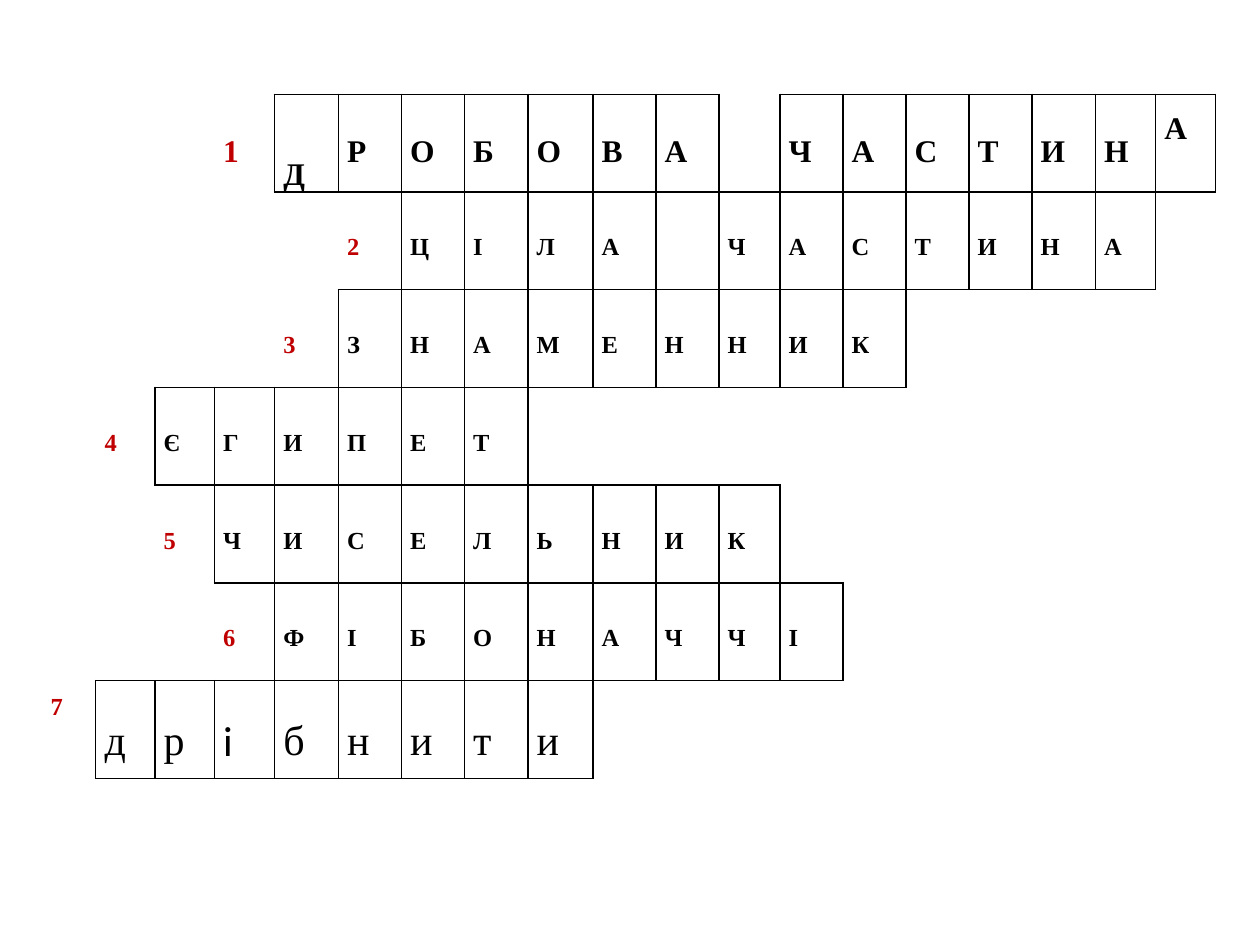
from dataclasses import dataclass

from lxml.etree import SubElement
from pptx import Presentation
from pptx.dml.color import RGBColor
from pptx.enum.text import MSO_ANCHOR as Anchor, PP_ALIGN as Align
from pptx.oxml.ns import qn
from pptx.util import Cm, Pt


@dataclass(frozen=True)
class Theme:
    ink: str = "000000"
    number: str = "C00000"
    key_fill: str = "FFFFFF"
    font: str = "Times New Roman"
    other_font: str = "Calibri"
    first_size: int = 18
    word_size: int = 14
    last_size: int = 24
    line_width: int = 1


THEME = Theme()

# Column of the first letter and the answer, row by row
ANSWERS = [
    (4, "ДРОБОВА ЧАСТИНА"),
    (6, "ЦІЛА ЧАСТИНА"),
    (5, "ЗНАМЕННИК"),
    (2, "ЄГИПЕТ"),
    (3, "ЧИСЕЛЬНИК"),
    (4, "ФІБОНАЧЧІ"),
    (1, "дрібнити"),
]
OPEN_GAP = (0, 11)  # the one word space without a box
KEY_COLUMN = 7
ANCHORS = {(0, 4): Anchor.BOTTOM, (0, 18): Anchor.TOP, (6, 0): Anchor.TOP}
COLUMN_WIDTHS = [1.09, 1.19, 1.2, 1.21, 1.29, 1.27, 1.27, 1.28, 1.31, 1.27,
                 1.27, 1.23, 1.27, 1.27, 1.27, 1.27, 1.28, 1.21, 1.21]
ROW_HEIGHT = 1.97
EDGES = {"a:lnL": (0, -1), "a:lnR": (0, 1), "a:lnT": (-1, 0), "a:lnB": (1, 0)}


def find_boxes():
    """Return the (row, column) places that have a frame."""
    boxes = {(row, start + index)
             for row, (start, word) in enumerate(ANSWERS)
             for index in range(len(word))}
    return boxes - {OPEN_GAP}


def draw_borders(cell, place, boxes):
    """Draw each edge that touches a box, on either side."""
    properties = cell._tc.get_or_add_tcPr()
    for tag, (down, right) in EDGES.items():
        line = SubElement(properties, qn(tag), w=str(Pt(THEME.line_width)))
        neighbour = (place[0] + down, place[1] + right)
        if place in boxes or neighbour in boxes:
            fill = SubElement(line, qn("a:solidFill"))
            SubElement(fill, qn("a:srgbClr"), val=THEME.ink)
        else:
            SubElement(line, qn("a:noFill"))


def write_cell(cell, place, text, size, color, bold=True, font=THEME.font):
    cell.margin_left = cell.margin_right = Cm(0.18)
    cell.margin_top = cell.margin_bottom = 0
    cell.vertical_anchor = ANCHORS.get(place, Anchor.MIDDLE)
    paragraph = cell.text_frame.paragraphs[0]
    paragraph.alignment = Align.JUSTIFY
    paragraph.line_spacing = 1.5
    run = paragraph.add_run()
    run.text = text
    run.font.name = font
    run.font.size = Pt(size)
    run.font.bold = bold
    run.font.color.rgb = RGBColor.from_string(color)


def add_grid(slide):
    shape = slide.shapes.add_table(
        len(ANSWERS), len(COLUMN_WIDTHS), Cm(0.84), Cm(1.9),
        Cm(sum(COLUMN_WIDTHS)), Cm(ROW_HEIGHT * len(ANSWERS)))
    table = shape.table
    table.first_row = table.horz_banding = False
    for column, width in zip(table.columns, COLUMN_WIDTHS):
        column.width = Cm(width)

    boxes = find_boxes()
    for row_index, row in enumerate(table.rows):
        row.height = Cm(ROW_HEIGHT)
        for column_index, cell in enumerate(row.cells):
            place = (row_index, column_index)
            draw_borders(cell, place, boxes)
            if column_index == KEY_COLUMN and place in boxes:
                cell.fill.solid()
                cell.fill.fore_color.rgb = RGBColor.from_string(THEME.key_fill)
            else:
                cell.fill.background()
    return table


def fill_answer(table, row, start, word):
    is_last = row == len(ANSWERS) - 1
    number_size = THEME.first_size if row == 0 else THEME.word_size
    letter_size = THEME.last_size if is_last else number_size

    # Red number in front of the word
    write_cell(table.cell(row, start - 1), (row, start - 1),
               str(row + 1), number_size, THEME.number)

    # One letter per box
    for column, letter in enumerate(word, start):
        if letter != " ":
            font = THEME.other_font if letter == "і" else THEME.font
            write_cell(table.cell(row, column), (row, column), letter,
                       letter_size, THEME.ink, not is_last, font)


def main():
    presentation = Presentation()
    presentation.slide_width, presentation.slide_height = Cm(25.4), Cm(19.05)
    slide = presentation.slides.add_slide(presentation.slide_layouts[6])

    # Crossword
    table = add_grid(slide)
    for row, (start, word) in enumerate(ANSWERS):
        fill_answer(table, row, start, word)

    presentation.save("out.pptx")


if __name__ == "__main__":
    main()
